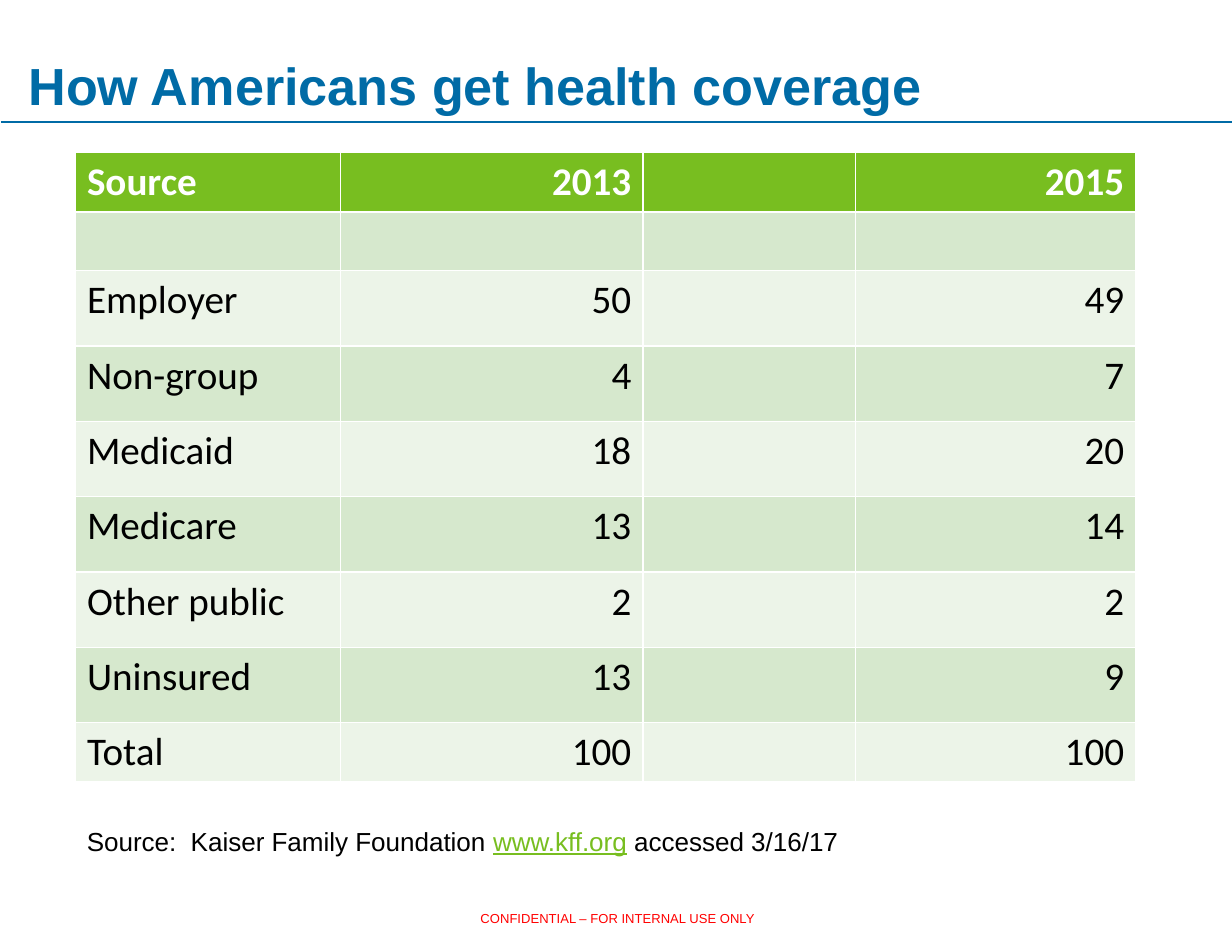
"""Build the slide on sources of health coverage in 2013 and 2015."""
from dataclasses import dataclass
from lxml import etree
from pptx import Presentation
from pptx.dml.color import RGBColor as Rgb
from pptx.enum import shapes, text
from pptx.oxml import ns
from pptx.util import Cm, Pt


@dataclass(frozen=True)
class Theme:
    blue: str = "006BA6"
    green: str = "78BE20"
    mid: str = "D6E8CD"
    pale: str = "ECF4E8"
    white: str = "FFFFFF"
    black: str = "000000"
    red: str = "FF0000"
    head: int = 32
    cell: int = 24
    note: int = 16
    foot: int = 8
    sans: str = "Arial"
    grid: str = "Calibri"


look = Theme()
left, right = text.PP_ALIGN.LEFT, text.PP_ALIGN.RIGHT


def put(frame, words, size, color=look.black, face=look.sans, bold=False,
        line=False, align=left):
    para = frame.paragraphs[0]
    para.alignment = align
    run = para.add_run()
    run.text = words
    font = run.font
    font.name, font.size, font.bold, font.underline = face, Pt(size), bold, line
    font.color.rgb = Rgb.from_string(color)


deck = Presentation()
deck.slide_width, deck.slide_height = Cm(26.67), Cm(20.32)
slide = deck.slides.add_slide(deck.slide_layouts[5])

rule = slide.shapes.add_connector(
    shapes.MSO_CONNECTOR.STRAIGHT, Cm(0.02), Cm(2.64), Cm(26.67), Cm(2.64))
rule.line.color.rgb = Rgb.from_string(look.blue)
rule.line.width = Pt(1.5)
etree.SubElement(rule._element.spPr, ns.qn("a:effectLst"))

title = slide.shapes.title
title.left, title.top, title.width, title.height = Cm(0.36), Cm(0), Cm(26), Cm(2.64)
frame = title.text_frame
frame.auto_size = text.MSO_AUTO_SIZE.NONE
frame.vertical_anchor = text.MSO_ANCHOR.BOTTOM
put(frame, "How Americans get health coverage", look.head, look.blue, bold=True)

rows = [
    ("Source", "2013", "", "2015"),
    ("", "", "", ""),
    ("Employer", "50", "", "49"),
    ("Non-group", "4", "", "7"),
    ("Medicaid", "18", "", "20"),
    ("Medicare", "13", "", "14"),
    ("Other public", "2", "", "2"),
    ("Uninsured", "13", "", "9"),
    ("Total", "100", "", "100"),
]
wide = [5.74, 6.55, 4.6, 6.07]
high = [1.27] * 2 + [1.63] * 6 + [1.27]
table = slide.shapes.add_table(
    len(rows), len(wide), Cm(1.63), Cm(3.3), Cm(sum(wide)), Cm(sum(high))).table
for col, width in zip(table.columns, wide):
    col.width = Cm(width)
for r, row in enumerate(rows):
    table.rows[r].height = Cm(high[r])
    fill = look.green if r == 0 else look.mid if r % 2 else look.pale
    for c, words in enumerate(row):
        cell = table.cell(r, c)
        cell.fill.solid()
        cell.fill.fore_color.rgb = Rgb.from_string(fill)
        if words:
            put(cell.text_frame, words, look.cell, look.black if r else look.white,
                look.grid, bold=r == 0, align=right if c else left)

note = slide.shapes.add_textbox(Cm(1.63), Cm(17.73), Cm(18.95), Cm(0.94)).text_frame
note.word_wrap = True
put(note, "Source:  Kaiser Family Foundation ", look.note)
put(note, "www.kff.org", look.note, look.green, line=True)
put(note, " accessed 3/16/17", look.note)

foot = slide.shapes.add_textbox(Cm(6.15), Cm(19.58), Cm(14.45), Cm(0.61)).text_frame
foot.word_wrap = True
put(foot, "CONFIDENTIAL – FOR INTERNAL USE ONLY", look.foot, look.red,
    align=text.PP_ALIGN.CENTER)

deck.save("out.pptx")
